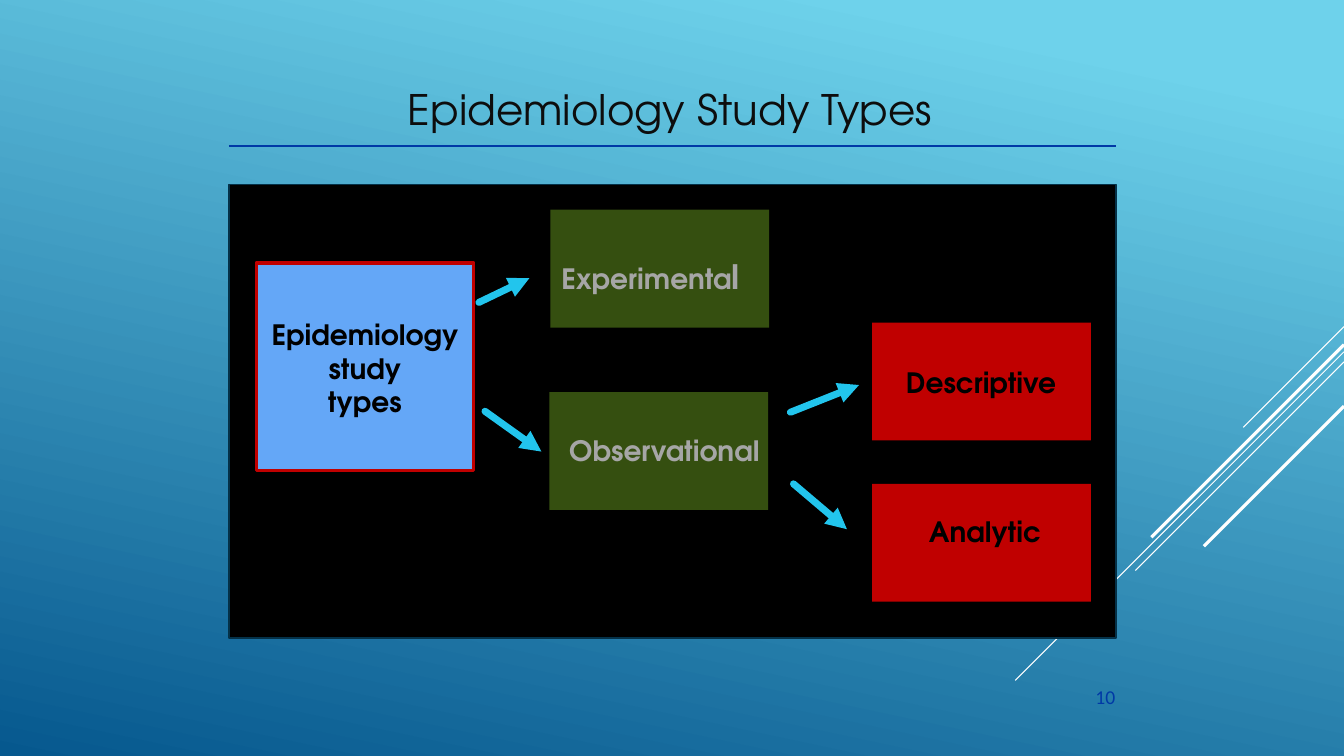
import pptx
import pptx.util
import pptx.dml.color
import pptx.enum.shapes
import pptx.enum.text
import pptx.oxml
import pptx.oxml.ns

Inches = pptx.util.Inches
Pt = pptx.util.Pt
RGBColor = pptx.dml.color.RGBColor
ALIGN = pptx.enum.text.PP_ALIGN

BLACK = RGBColor(0x00, 0x00, 0x00)
WHITE = RGBColor(0xFF, 0xFF, 0xFF)
INK = RGBColor(0x0D, 0x0D, 0x0D)
NAVY = RGBColor(0x00, 0x39, 0xA6)
EDGE = RGBColor(0x04, 0x31, 0x48)
BLUE = RGBColor(0x64, 0xA7, 0xF7)
RED = RGBColor(0xC0, 0x00, 0x00)
GREEN = RGBColor(0x35, 0x4F, 0x10)
GREY = RGBColor(0xA6, 0xA6, 0xA6)
CYAN = RGBColor(0x22, 0xC5, 0xED)
SKY = RGBColor(0x6E, 0xD2, 0xEB)
DEEP = RGBColor(0x06, 0x58, 0x8E)

FONT = "TeX Gyre Adventor"


def add_xml(parent, tag, **attrs):
    node = pptx.oxml.parse_xml(f"<{tag} {pptx.oxml.ns.nsdecls('a')}/>")
    for key, value in attrs.items():
        node.set(key, value)
    parent.append(node)


def paint(slide):
    fill = slide.background.fill
    fill.gradient()
    fill.gradient_angle = 258
    for stop, (place, color) in zip(fill.gradient_stops, ((0.1, SKY), (1, DEEP))):
        stop.position = place
        stop.color.rgb = color


def add_line(slide, start, end, color, width, arrow=False):
    ends = [Inches(v) for v in (*start, *end)]
    line = slide.shapes.add_connector(pptx.enum.shapes.MSO_CONNECTOR.STRAIGHT, *ends)
    line.line.color.rgb = color
    line.line.width = Pt(width)
    if arrow:
        stroke = line.line._get_or_add_ln()
        stroke.set("cap", "rnd")
        add_xml(stroke, "a:tailEnd", type="triangle")
    add_xml(line._element.spPr, "a:effectLst")


def add_box(slide, at, fill, edge=None, width=1):
    box = slide.shapes.add_shape(
        pptx.enum.shapes.MSO_SHAPE.RECTANGLE, *[Inches(v) for v in at])
    box.shadow.inherit = False
    box.fill.solid()
    box.fill.fore_color.rgb = fill
    if edge is None:
        box.line.fill.background()
    else:
        box.line.color.rgb = edge
        box.line.width = Pt(width)


def add_text(slide, at, *paras, size=20, color=BLACK, bold=True, font=FONT,
             align=ALIGN.CENTER):
    """Each paragraph is a string or a list of (text, size) runs."""
    frame = slide.shapes.add_textbox(*[Inches(v) for v in at]).text_frame
    frame.word_wrap = True
    for i, runs in enumerate(paras):
        para = frame.add_paragraph() if i else frame.paragraphs[0]
        para.alignment = align
        if isinstance(runs, str):
            runs = [(runs, size)]
        for words, points in runs:
            run = para.add_run()
            run.text = words
            run.font.size = Pt(points)
            run.font.name = font
            run.font.bold = bold
            run.font.color.rgb = color


def main():
    deck = pptx.Presentation()
    deck.slide_width, deck.slide_height = Inches(13.33), Inches(7.5)
    slide = deck.slides.add_slide(deck.slide_layouts[6])
    paint(slide)

    # Diagonal rays, all at 45 degrees from the right edge
    for top, reach, width in ((3.24, 1, 0.75), (3.49, 3.26, 0.75), (3.59, 2.07, 0.75),
                              (3.42, 1.91, 2.25), (4.03, 1.39, 2.25)):
        add_line(slide, (13.33, top), (13.33 - reach, top + reach), WHITE, width)

    # Panel and title
    add_box(slide, (2.27, 1.83, 8.8, 4.5), BLACK, EDGE, 1.25)
    add_text(slide, (2.17, 0.78, 8.95, 0.61), "Epidemiology Study Types",
             size=30, color=INK, bold=False)
    add_line(slide, (2.27, 1.45), (11.07, 1.45), NAVY, 1.25)

    # Root of the tree
    add_box(slide, (2.54, 2.61, 2.16, 2.06), BLUE, RED, 2.25)
    add_text(slide, (2.55, 3.1, 2.14, 1.11), "Epidemiology study", "types")

    # Branches: box corner, fill, label corner, label, label colour
    for corner, fill, spot, label, color in (
            ((5.46, 2.08), GREEN, (5.38, 2.49), [("Experimenta", 20), ("l ", 24)], GREY),
            ((5.45, 3.89), GREEN, (5.47, 4.25), "Observational", GREY),
            ((8.65, 3.2), RED, (8.61, 3.58), "Descriptive", BLACK),
            ((8.65, 4.8), RED, (8.65, 5.06), "Analytic", BLACK)):
        add_box(slide, (*corner, 2.17, 1.17), fill)
        add_text(slide, (*spot, 2.24, 0.44), label, color=color)

    # Arrows
    for start, end in (((4.75, 3), (5.25, 2.76)), ((4.81, 4.08), (5.37, 4.48)),
                       ((7.84, 4.09), (8.52, 3.82)), ((7.87, 4.8), (8.4, 5.25))):
        add_line(slide, start, end, CYAN, 5, arrow=True)

    # Slide number
    add_text(slide, (8.83, 6.75, 2.33, 0.4), "10", size=14, color=NAVY, bold=False,
             font="Calibri", align=ALIGN.RIGHT)

    deck.save("out.pptx")


if __name__ == "__main__":
    main()
